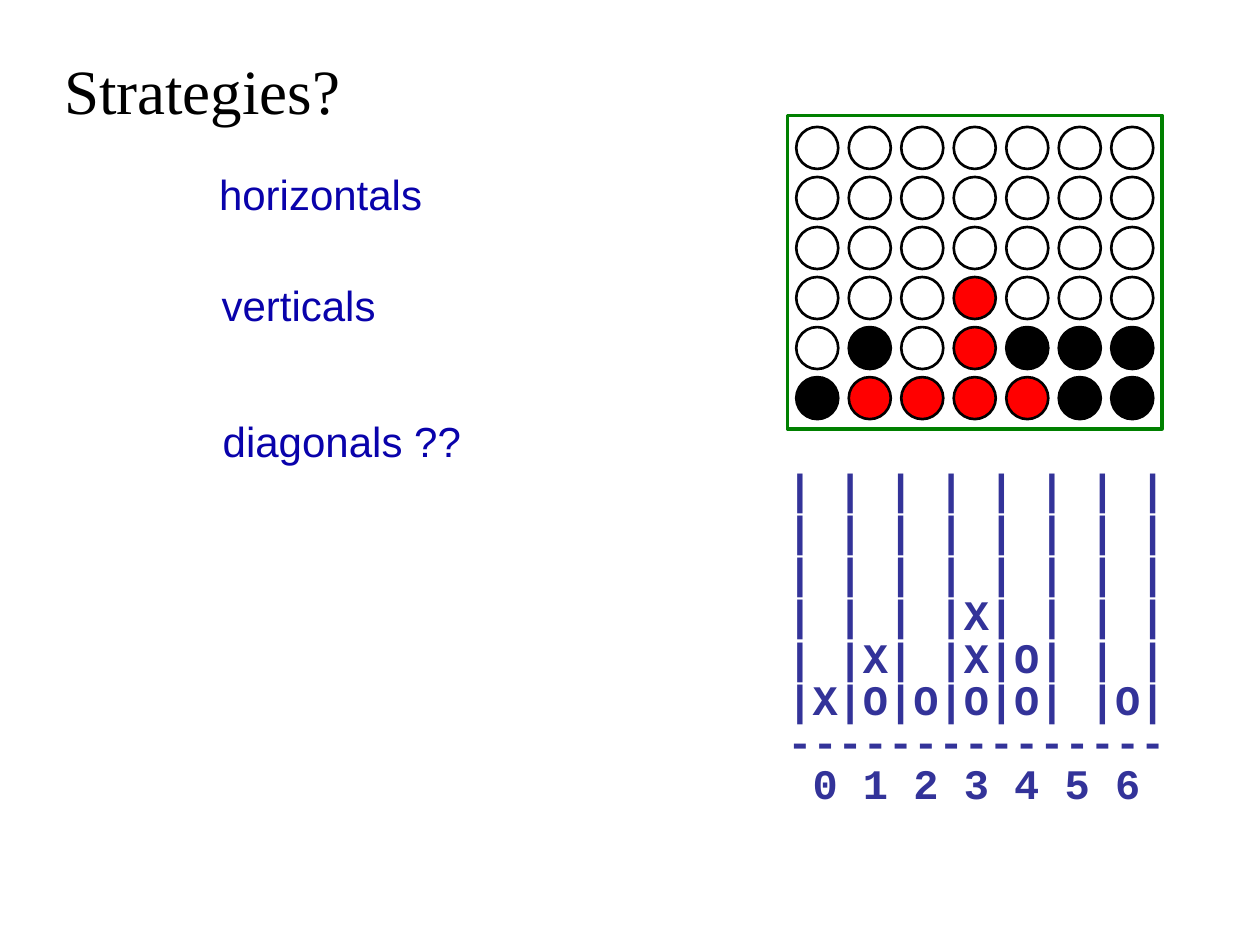
from dataclasses import dataclass

from pptx import Presentation
from pptx import util as u
from pptx.dml.color import RGBColor
from pptx.enum import shapes, text


@dataclass(frozen=True)
class Theme:
    ink: str = "000000"
    blue: str = "0902AB"
    navy: str = "333399"
    red: str = "FF0000"
    white: str = "FFFFFF"
    green: str = "008000"
    serif: str = "Times New Roman"
    sans: str = "Arial"
    mono: str = "Courier New"
    head: int = 36
    body: int = 24


class Deck:
    def __init__(self, theme):
        self.theme = theme
        self.prs = Presentation()
        self.prs.slide_width, self.prs.slide_height = u.Pt(720), u.Pt(540)
        self.slide = self.prs.slides.add_slide(self.prs.slide_layouts[6])

    def label(self, box, lines, font, size, color, bold=False,
              anchor=text.MSO_ANCHOR.BOTTOM, para=None, gap=0):
        """Add a text box with one paragraph for each line."""
        frame = self.slide.shapes.add_textbox(*map(u.Pt, box)).text_frame
        frame.word_wrap = True
        frame.vertical_anchor = anchor
        style = {"name": font, "size": u.Pt(size), "bold": bold}
        for i, line in enumerate(lines):
            par = frame.paragraphs[0] if i == 0 else frame.add_paragraph()
            for key, val in (para or {}).items():
                setattr(par, key, val)
            if i and gap:
                par.space_before = u.Pt(gap)
            run = par.add_run()
            run.text = line
            for key, val in style.items():
                setattr(run.font, key, val)
            run.font.color.rgb = RGBColor.from_string(color)

    def draw(self, kind, box, line, width, fill=None):
        """Add an outlined shape, hollow if no fill is given."""
        shape = self.slide.shapes.add_shape(kind, *map(u.Pt, box))
        shape.shadow.inherit = False
        if fill:
            shape.fill.solid()
            shape.fill.fore_color.rgb = RGBColor.from_string(fill)
        else:
            shape.fill.background()
        shape.line.color.rgb = RGBColor.from_string(line)
        shape.line.width = u.Pt(width)


def main():
    t = Theme()
    deck = Deck(t)

    # Title
    deck.label((29.5, 26, 450, 50.4), ["Strategies?"], t.serif, t.head, t.ink)

    # Ways to win
    for left, top, word in ((118.1, 92.9, "horizontals"),
                            (119.5, 156.2, "verticals"),
                            (120.2, 234, "diagonals ??")):
        deck.label((left, top, 198, 36), [word], t.sans, t.body, t.blue)

    # Game board: one disc for each cell, inside a frame
    board = (".......",
             ".......",
             ".......",
             "...R...",
             ".B.RBBB",
             "BRRRRBB")
    tint = {".": t.white, "R": t.red, "B": t.ink}
    for row, cells in enumerate(board):
        for col, cell in enumerate(cells):
            deck.draw(shapes.MSO_SHAPE.OVAL,
                      (455 + 30 * col, 72.5 + 28.6 * row, 24, 24),
                      t.ink, 1.5, tint[cell])
    deck.draw(shapes.MSO_SHAPE.RECTANGLE, (450, 66, 214, 179), t.green, 2.25)

    # Text board
    moves = ("       ", "       ", "       ", "   X   ", " X XO  ", "XOOOO O")
    lines = ["|" + "|".join(row) + "|" for row in moves]
    lines += ["-" * 15, " " + " ".join("0123456")]
    deck.label((442.8, 275.8, 240, 200), lines, t.mono, t.body, t.navy,
               bold=True, anchor=text.MSO_ANCHOR.TOP,
               para={"line_spacing": 0.4}, gap=12.5)

    deck.prs.save("out.pptx")


if __name__ == "__main__":
    main()
